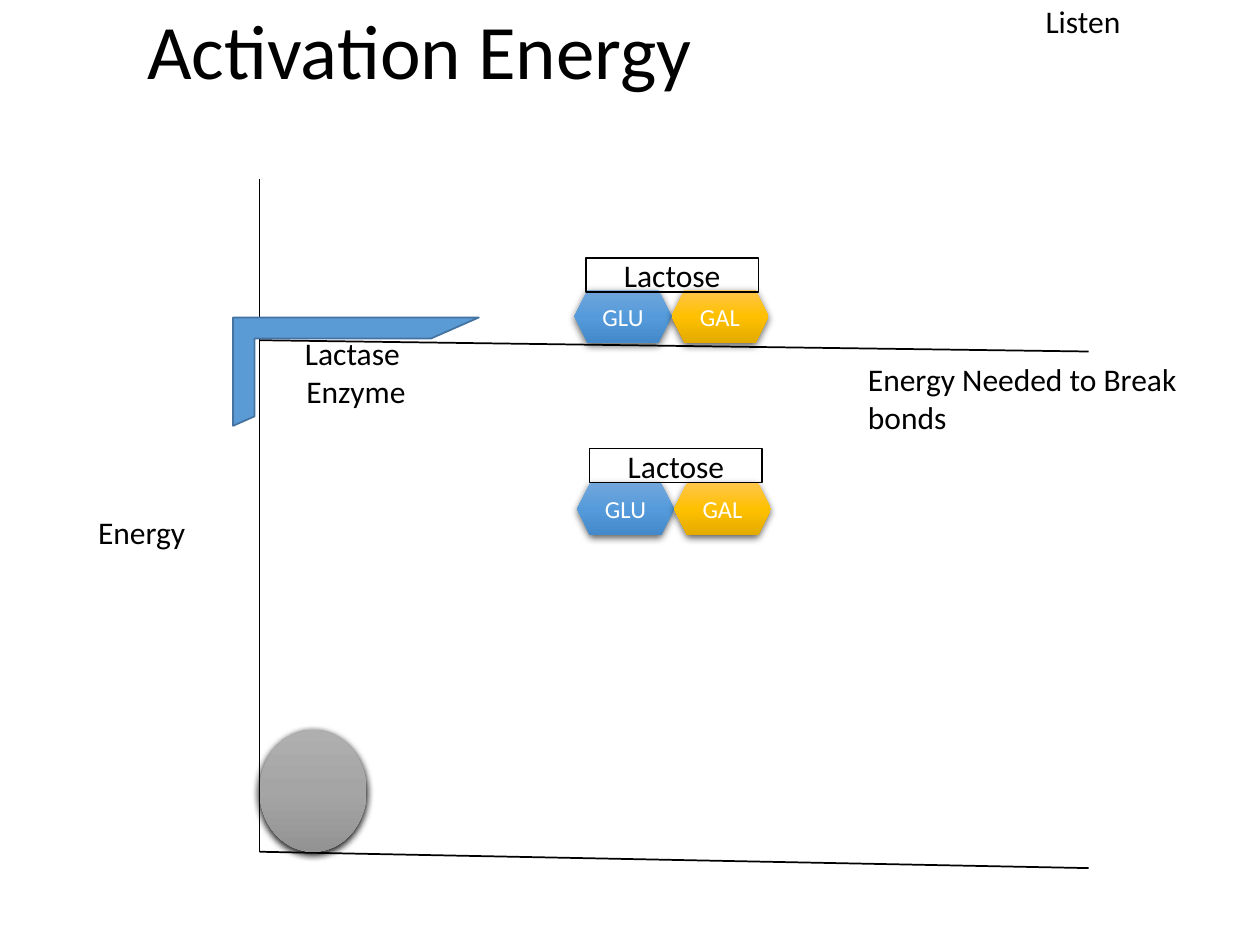
from dataclasses import dataclass

import pptx
import pptx.dml.color
import pptx.enum.shapes
import pptx.enum.text
import pptx.oxml
import pptx.oxml.ns
import pptx.util

Inches = pptx.util.Inches
Pt = pptx.util.Pt
SHAPE = pptx.enum.shapes.MSO_SHAPE
ALIGN = pptx.enum.text.PP_ALIGN
MIDDLE = pptx.enum.text.MSO_ANCHOR.MIDDLE
FONT = "Calibri"
NS = pptx.oxml.ns.nsdecls("a")

COLORS = {
    "black": "000000",
    "white": "FFFFFF",
    "enzyme": "5B9BD5",
    "enzyme_edge": "43739E",
}
GRADIENTS = {
    "gray": ("AFAFAF", "A5A5A5", "939393"),
    "blue": ("71A6DB", "559BDB", "448ACA"),
    "gold": ("FFC64B", "FFC000", "E3AB00"),
}


@dataclass
class Label:
    text: str
    left: float
    top: float
    width: float
    height: float


@dataclass
class Line:
    x1: float
    y1: float
    x2: float
    y2: float


@dataclass
class Lactose:
    """A sugar pair with the position of its hexagons and of its name box."""
    left: float
    top: float
    name_left: float
    name_top: float


AXIS_X, FLOOR_Y, LINE_END = 2.06, 6.76, 8.64
LINES = [
    Line(AXIS_X, 1.42, AXIS_X, FLOOR_Y),
    Line(LINE_END, 6.89, AXIS_X, FLOOR_Y),
    Line(LINE_END, 2.79, AXIS_X, 2.7),
]
LABELS = [
    Label("Energy", 0.68, 4.02, 1.58, 0.41),
    Label("Energy Needed to Break bonds", 6.79, 2.81, 2.71, 0.71),
    Label("Listen", 8.2, -0.03, 2.27, 0.4),
]
MOLECULES = [
    Lactose(4.58, 3.83, 4.68, 3.56),
    Lactose(4.56, 2.3, 4.65, 2.05),
]
HEX_W, HEX_H = 0.77, 0.42


def rgb(name: str) -> pptx.dml.color.RGBColor:
    return pptx.dml.color.RGBColor.from_string(COLORS[name])


def write(s, text: str, size: float, color: str = "black", align=None) -> None:
    tf = s.text_frame
    tf.word_wrap = True
    tf.text = text
    for p in tf.paragraphs:
        p.alignment = align
        for r in p.runs:
            r.font.name, r.font.size = FONT, Pt(size)
            r.font.color.rgb = rgb(color)


def add_shape(shapes, kind, left: float, top: float, width: float, height: float):
    s = shapes.add_shape(kind, Inches(left), Inches(top), Inches(width), Inches(height))
    s.shadow.inherit = False
    s.text_frame.vertical_anchor = MIDDLE
    return s


def outline(s, color: str) -> None:
    s.line.color.rgb = rgb(color)
    s.line.width = Pt(1)


def shade(s, gradient: str) -> None:
    """Give a borderless shape a top-to-bottom gradient and a soft shadow."""
    s.fill.background()
    s.line.fill.background()
    stops = "".join(
        f'<a:gs pos="{pos}"><a:srgbClr val="{color}"/></a:gs>'
        for pos, color in zip((0, 50000, 100000), GRADIENTS[gradient])
    )
    sp_pr = s._element.spPr
    no_fill = sp_pr.find(pptx.oxml.ns.qn("a:noFill"))
    sp_pr.replace(no_fill, pptx.oxml.parse_xml(
        f'<a:gradFill {NS} rotWithShape="1"><a:gsLst>{stops}</a:gsLst>'
        '<a:lin ang="5400000" scaled="0"/></a:gradFill>'))
    sp_pr.find(pptx.oxml.ns.qn("a:effectLst")).append(pptx.oxml.parse_xml(
        f'<a:outerShdw {NS} blurRad="{Pt(4.5)}" dist="{Pt(1.5)}" dir="5400000" '
        'algn="ctr" rotWithShape="0"><a:srgbClr val="000000">'
        '<a:alpha val="63000"/></a:srgbClr></a:outerShdw>'))


def add_line(shapes, line: Line) -> None:
    s = shapes.add_connector(
        pptx.enum.shapes.MSO_CONNECTOR.STRAIGHT,
        Inches(line.x1), Inches(line.y1), Inches(line.x2), Inches(line.y2))
    outline(s, "black")
    s._element.spPr.append(pptx.oxml.parse_xml(f"<a:effectLst {NS}/>"))


def add_label(shapes, label: Label) -> None:
    s = shapes.add_textbox(Inches(label.left), Inches(label.top),
                           Inches(label.width), Inches(label.height))
    write(s, label.text, 18)


def add_ball(shapes) -> None:
    shade(add_shape(shapes, SHAPE.OVAL, AXIS_X, 5.79, 0.85, 0.97), "gray")


def add_enzyme(shapes) -> None:
    s = add_shape(shapes, SHAPE.HALF_FRAME, 1.85, 2.52, 1.95, 0.86)
    s.adjustments[0], s.adjustments[1] = 0.194, 0.198
    s.fill.solid()
    s.fill.fore_color.rgb = rgb("enzyme")
    outline(s, "enzyme_edge")
    write(s, "Lactase \nEnzyme", 18, align=ALIGN.CENTER)


def add_lactose(shapes, molecule: Lactose) -> None:
    group = shapes.add_group_shape().shapes
    for i, (sugar, gradient) in enumerate((("GLU", "blue"), ("GAL", "gold"))):
        s = add_shape(group, SHAPE.HEXAGON, molecule.left + i * HEX_W, molecule.top,
                      HEX_W, HEX_H)
        shade(s, gradient)
        write(s, sugar, 14, "white", ALIGN.CENTER)

    s = add_shape(group, SHAPE.RECTANGLE, molecule.name_left, molecule.name_top, 1.37, 0.27)
    s.fill.solid()
    s.fill.fore_color.rgb = rgb("white")
    color = s._element.spPr.find(".//" + pptx.oxml.ns.qn("a:srgbClr"))
    color.append(pptx.oxml.parse_xml(f'<a:alpha {NS} val="16000"/>'))
    outline(s, "black")
    write(s, "Lactose", 18, align=ALIGN.CENTER)


def add_title(slide) -> None:
    s = slide.shapes.title
    s.left, s.top, s.width, s.height = map(Inches, (1.07, 0, 8.43, 0.86))
    write(s, "Activation Energy", 44, align=ALIGN.LEFT)
    s.text_frame.auto_size = pptx.enum.text.MSO_AUTO_SIZE.NONE
    s.text_frame.vertical_anchor = MIDDLE
    s.text_frame.paragraphs[0].line_spacing = 0.9


def main() -> None:
    prs = pptx.Presentation()
    prs.slide_width, prs.slide_height = Inches(10), Inches(7.5)
    slide = prs.slides.add_slide(prs.slide_layouts[5])
    shapes = slide.shapes

    add_title(slide)
    add_ball(shapes)
    for line in LINES:
        add_line(shapes, line)
    add_ball(shapes)  # a second ball in front of the lines deepens the shadow
    add_enzyme(shapes)
    for molecule in MOLECULES:
        add_lactose(shapes, molecule)
    for label in LABELS:
        add_label(shapes, label)

    prs.save("out.pptx")


if __name__ == "__main__":
    main()
